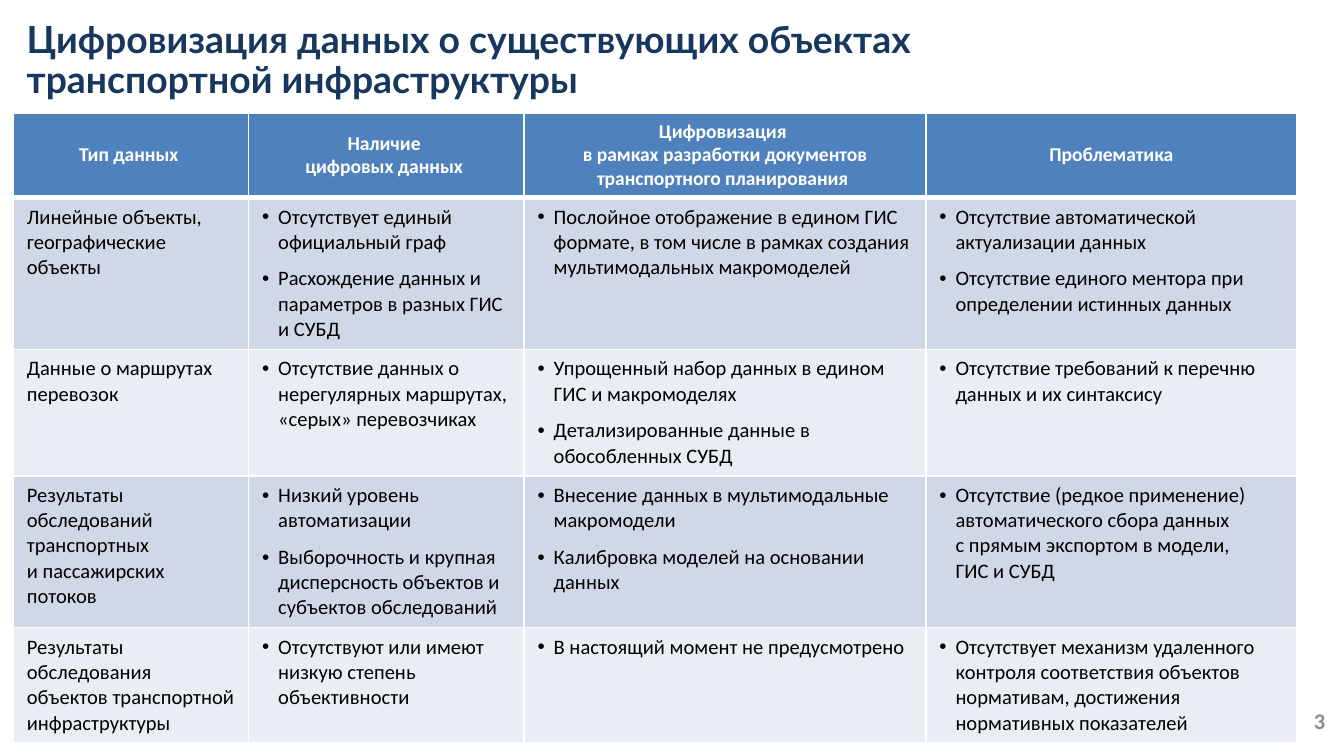
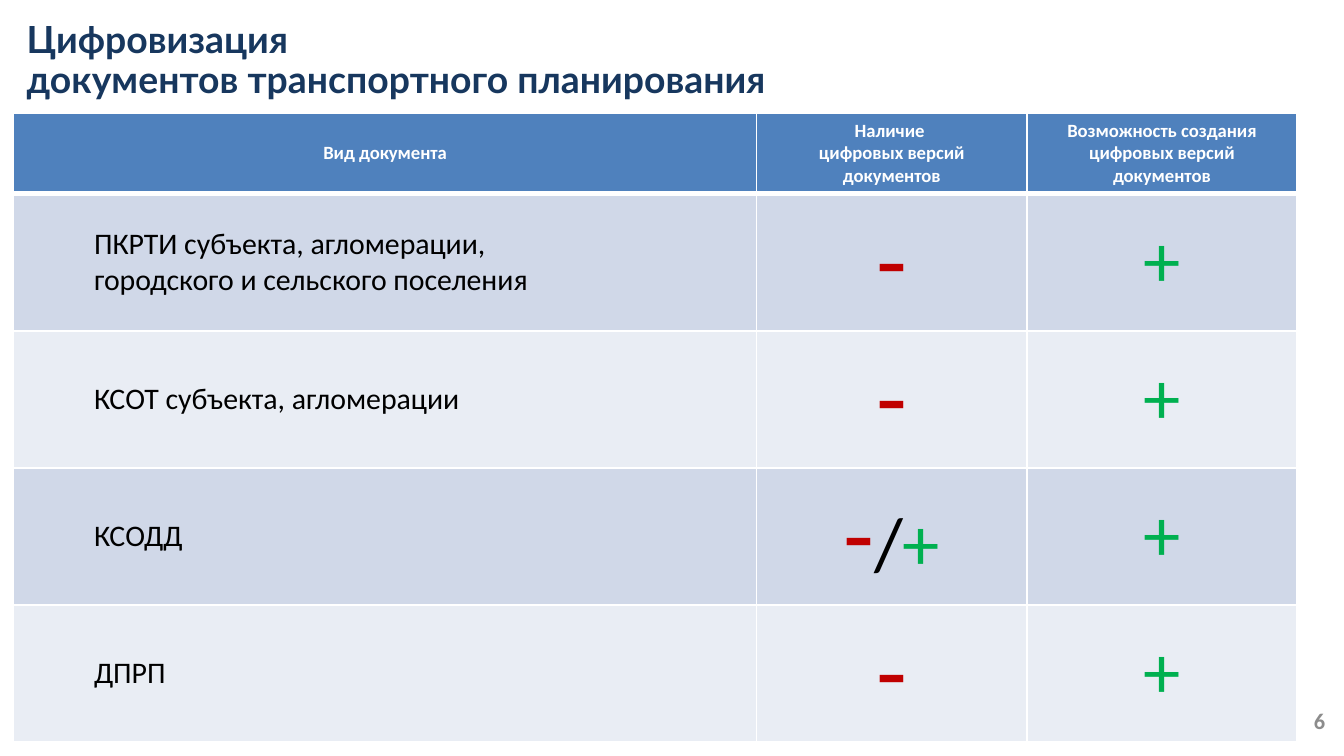
from lxml import etree
from pptx import Presentation
from pptx.dml.color import RGBColor
from pptx.enum.text import MSO_ANCHOR as ANCHOR, PP_ALIGN as ALIGN
from pptx.oxml.ns import qn
from pptx.util import Inches, Pt

WHITE, BLACK, NAVY, BLUE, GRAY = "FFFFFF", "000000", "17375E", "4F81BD", "8C8C8C"
RED, GREEN = "C00000", "00B050"
BANDS = ["D0D8E8", "E9EDF4"]
TITLE_FONT, BODY_FONT = "Lato", "Calibri"

DATA_HEADER = [
    "Тип данных ",
    "Наличие \nцифровых данных ",
    "Цифровизация \nв рамках разработки документов транспортного планирования ",
    "Проблематика",
]
DATA_ROWS = [
    ("Линейные объекты, географические объекты",
     ["Отсутствует единый официальный граф",
      "Расхождение данных и параметров в разных ГИС и СУБД"],
     ["Послойное отображение в едином ГИС формате, в том числе в рамках создания "
      "мультимодальных макромоделей"],
     ["Отсутствие автоматической актуализации данных",
      "Отсутствие единого ментора при определении истинных данных"]),
    ("Данные о маршрутах перевозок",
     ["Отсутствие данных о нерегулярных маршрутах, «серых» перевозчиках"],
     ["Упрощенный набор данных в едином ГИС и макромоделях",
      "Детализированные данные в обособленных СУБД"],
     ["Отсутствие требований к перечню данных и их синтаксису"]),
    ("Результаты обследований транспортных \nи пассажирских потоков",
     ["Низкий уровень автоматизации",
      "Выборочность и крупная дисперсность объектов и субъектов обследований"],
     ["Внесение данных в мультимодальные макромодели",
      "Калибровка моделей на основании данных"],
     ["Отсутствие (редкое применение) автоматического сбора данных \n"
      "с прямым экспортом в модели, \nГИС и СУБД"]),
    ("Результаты обследования объектов транспортной инфраструктуры",
     ["Отсутствуют или имеют низкую степень объективности"],
     ["В настоящий момент не предусмотрено"],
     ["Отсутствует механизм удаленного контроля соответствия объектов нормативам, "
      "достижения нормативных показателей"]),
]
DOC_HEADER = [
    "Вид документа",
    "Наличие \nцифровых версий документов",
    "Возможность создания цифровых версий документов",
]
DOC_ROWS = [
    ("ПКРТИ субъекта, агломерации, \nгородского и сельского поселения", "-", "+"),
    ("КСОТ субъекта, агломерации", "-", "+"),
    ("КСОДД", "-/+", "+"),
    ("ДПРП", "-", "+"),
]
SIGNS = {"-": (54, RED), "/": (40, BLACK), "+": (40, GREEN)}


def rgb(value):
    """Turn a hex string into a colour."""
    return RGBColor.from_string(value)


def add_text(p, text, size=11, color=BLACK, bold=False, font=BODY_FONT):
    """Add text to a paragraph, with line breaks at newlines."""
    for i, line in enumerate(text.split("\n")):
        if i:
            p.add_line_break()
        r = p.add_run()
        r.text = line
        r.font.size, r.font.bold, r.font.name = Pt(size), bold, font
        r.font.color.rgb = rgb(color)


def set_indent(p, left, first=0, bullet=None):
    """Set the paragraph indents and an optional bullet."""
    pPr = p._p.get_or_add_pPr()
    pPr.set("marL", str(Inches(left)))
    pPr.set("indent", str(Inches(first)))
    if bullet:
        etree.SubElement(pPr, qn("a:buFont")).set("typeface", "Arial")
        etree.SubElement(pPr, qn("a:buChar")).set("char", bullet)


def add_box(slide, left, top, width, height, anchor=ANCHOR.TOP):
    """Add a wrapping text box and return its first paragraph."""
    tf = slide.shapes.add_textbox(*map(Inches, (left, top, width, height))).text_frame
    tf.word_wrap, tf.vertical_anchor = True, anchor
    return tf.paragraphs[0]


def add_slide(prs, title, number, title_width):
    """Add a blank slide with its title and number."""
    slide = prs.slides.add_slide(prs.slide_layouts[6])
    p = add_box(slide, 0.1, 0.11, title_width, 0.53)
    p.line_spacing = 0.9
    add_text(p, title, size=20, color=NAVY, bold=True, font=TITLE_FONT)
    p = add_box(slide, 7.63, 5.21, 2.33, 0.3, ANCHOR.MIDDLE)
    p.alignment = ALIGN.RIGHT
    add_text(p, number, size=12, color=GRAY, bold=True)
    return slide


def style_cell(cell, fill, top=1, bottom=1):
    """Give a cell white borders and a solid fill."""
    tcPr = cell._tc.get_or_add_tcPr()
    for side, width in (("L", 1), ("R", 1), ("T", top), ("B", bottom)):
        ln = etree.SubElement(tcPr, qn(f"a:ln{side}"), w=str(Pt(width)))
        solid = etree.SubElement(ln, qn("a:solidFill"))
        etree.SubElement(solid, qn("a:srgbClr")).set("val", WHITE)
    cell.fill.solid()
    cell.fill.fore_color.rgb = rgb(fill)


def add_grid(slide, header, header_size, widths, heights):
    """Add a table with a header row and banded body rows."""
    frame = slide.shapes.add_table(len(heights), len(widths), Inches(0.1), Inches(0.84),
                                   Inches(sum(widths)), Inches(sum(heights)))
    table = frame.table
    table.horz_banding = False
    for column, width in zip(table.columns, widths):
        column.width = Inches(width)
    for i, (row, height) in enumerate(zip(table.rows, heights)):
        row.height = Inches(height)
        for cell in row.cells:
            if i:
                style_cell(cell, BANDS[(i - 1) % 2], top=3 if i == 1 else 1)
            else:
                style_cell(cell, BLUE, bottom=3)
    for cell, text in zip(table.rows[0].cells, header):
        cell.vertical_anchor = ANCHOR.MIDDLE
        p = cell.text_frame.paragraphs[0]
        p.alignment = ALIGN.CENTER
        add_text(p, text, size=header_size, color=WHITE, bold=True)
    return table


def fill_bullets(cell, items):
    """Write bulleted paragraphs into a cell."""
    tf = cell.text_frame
    for i, item in enumerate(items):
        p = tf.add_paragraph() if i else tf.paragraphs[0]
        p.space_before, p.space_after = Pt(3 if i else 0), Pt(3)
        set_indent(p, 0.12, -0.12, "•")
        add_text(p, item)


def fill_signs(cell, signs):
    """Write large coloured signs into a cell."""
    cell.vertical_anchor = ANCHOR.MIDDLE
    p = cell.text_frame.paragraphs[0]
    p.alignment, p.space_after = ALIGN.CENTER, Pt(3)
    for sign in signs:
        size, color = SIGNS[sign]
        add_text(p, sign, size=size, color=color)


def build_data_slide(prs):
    """Build the slide on data about infrastructure objects."""
    slide = add_slide(prs, "Цифровизация данных о существующих объектах "
                      "транспортной инфраструктуры", "3", 7.5)
    table = add_grid(slide, DATA_HEADER, 10.5, [1.75, 2.05, 2.99, 2.76],
                     [0.63, 1.13, 0.94, 1.13, 0.86])
    for i, (kind, *lists) in enumerate(DATA_ROWS, 1):
        add_text(table.cell(i, 0).text_frame.paragraphs[0], kind)
        for j, items in enumerate(lists, 1):
            fill_bullets(table.cell(i, j), items)


def build_document_slide(prs):
    """Build the slide on planning documents."""
    slide = add_slide(prs, "Цифровизация \nдокументов транспортного планирования",
                      "6", 8.37)
    table = add_grid(slide, DOC_HEADER, 10, [5.53, 2.01, 2.01],
                     [0.59] + [1.02] * len(DOC_ROWS))
    for i, (name, *marks) in enumerate(DOC_ROWS, 1):
        cell = table.cell(i, 0)
        cell.vertical_anchor = ANCHOR.MIDDLE
        p = cell.text_frame.paragraphs[0]
        p.level = 1
        set_indent(p, 0.5)
        add_text(p, name, size=16)
        for j, signs in enumerate(marks, 1):
            fill_signs(table.cell(i, j), signs)


def main():
    """Build and save the presentation."""
    prs = Presentation()
    prs.slide_width = Inches(10)
    prs.slide_height = prs.slide_width * 9 // 16
    build_data_slide(prs)
    build_document_slide(prs)
    prs.save("out.pptx")


if __name__ == "__main__":
    main()
